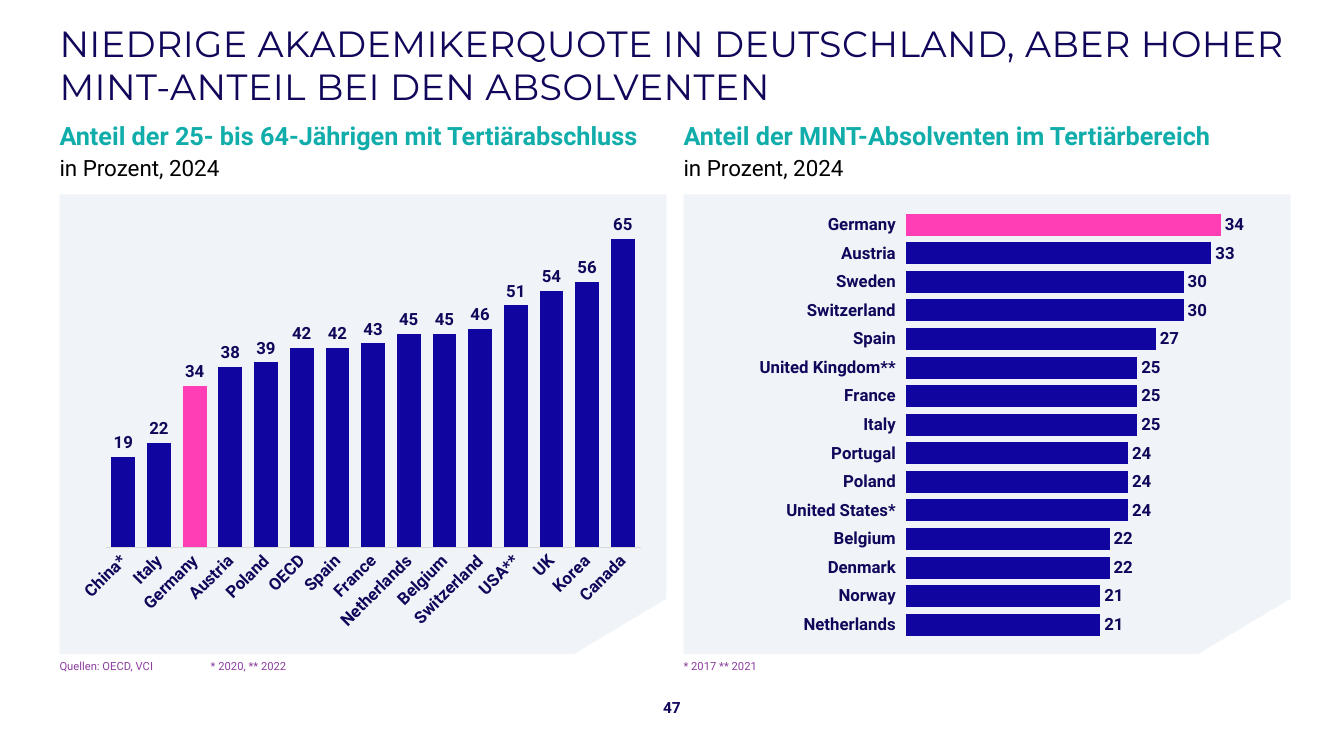
import lxml.etree
import pptx
import pptx.chart.data
import pptx.dml.color
import pptx.enum.chart
import pptx.enum.dml
import pptx.enum.text
import pptx.oxml
import pptx.oxml.ns
import pptx.util

Inches, Pt = pptx.util.Inches, pptx.util.Pt
qn = pptx.oxml.ns.qn
PP_ALIGN = pptx.enum.text.PP_ALIGN
ANCHOR = pptx.enum.text.MSO_ANCHOR
CHART_TYPE = pptx.enum.chart.XL_CHART_TYPE
TICK = pptx.enum.chart.XL_TICK_MARK

COLORS = {
    "ink": "10065A", "bar": "10069F", "highlight": "FF3EB5", "heading": "10ADAA",
    "unit": "000000", "note": "8C3E9F", "panel": "F0F3F7", "axis": "D9D9D9",
}
TITLE = "NIEDRIGE AKADEMIKERQUOTE IN DEUTSCHLAND, ABER HOHER MINT-ANTEIL BEI DEN ABSOLVENTEN"
PAGE_NUMBER = "47"
HIGHLIGHTED = "Germany"

PANELS = [
    {
        "left": 0.59,
        "heading": "Anteil der 25- bis 64-Jährigen mit Tertiärabschluss",
        "unit": "in Prozent, 2024",
        "note": "Quellen: OECD, VCI\t\t* 2020, ** 2022",
        "type": CHART_TYPE.COLUMN_CLUSTERED,
        "gap": 50, "overlap": -27, "maximum": 70,
        "shares": {
            "China*": 19, "Italy": 22, "Germany": 34, "Austria": 38, "Poland": 39,
            "OECD": 42, "Spain": 42, "France": 43, "Netherlands": 45, "Belgium": 45,
            "Switzerland": 46, "USA**": 51, "UK": 54, "Korea": 56, "Canada": 65,
        },
    },
    {
        "left": 6.78,
        "heading": "Anteil der MINT-Absolventen im Tertiärbereich",
        "unit": "in Prozent, 2024",
        "note": "* 2017 ** 2021",
        "type": CHART_TYPE.BAR_CLUSTERED,
        "gap": 30, "overlap": 0, "maximum": 40,
        "shares": {
            "Netherlands": 21, "Norway": 21, "Denmark": 22, "Belgium": 22,
            "United States*": 24, "Poland": 24, "Portugal": 24, "Italy": 25,
            "France": 25, "United Kingdom**": 25, "Spain": 27, "Switzerland": 30,
            "Sweden": 30, "Austria": 33, "Germany": 34,
        },
    },
]
PANEL_TOP, PANEL_WIDTH, PANEL_HEIGHT = 1.93, 6.02, 4.56
CUT_WIDTH, CUT_HEIGHT = 0.92, 0.55
BAR_PLOT = {"x": 0.365, "y": 0.009, "w": 0.635, "h": 0.991}


def rgb(name):
    return pptx.dml.color.RGBColor.from_string(COLORS[name])


def set_font(font, size, color, bold=False, name="Roboto"):
    font.name, font.size, font.bold = name, Pt(size), bold
    font.color.rgb = rgb(color)


def write(shape, text, box, size, color, bold=False, name="Roboto",
          align=PP_ALIGN.LEFT, anchor=ANCHOR.TOP, inset=0):
    """Place a text shape and fill it with one plain, unbulleted paragraph."""
    shape.left, shape.top, shape.width, shape.height = map(Inches, box)
    frame = shape.text_frame
    frame.text = text
    frame.word_wrap = True
    frame.auto_size = pptx.enum.text.MSO_AUTO_SIZE.NONE
    frame.vertical_anchor = anchor
    frame.margin_left = frame.margin_right = 0
    frame.margin_top = frame.margin_bottom = Inches(inset)
    paragraph = frame.paragraphs[0]
    paragraph.alignment = align
    paragraph.space_before = Pt(0)
    properties = paragraph._p.get_or_add_pPr()
    properties.set("marL", "0")
    properties.set("indent", "0")
    lxml.etree.SubElement(properties, qn("a:buNone"))
    set_font(paragraph.font, size, color, bold, name)
    return paragraph


def add_panel(slide, left):
    """Draw the pale backdrop with its lower right corner cut off."""
    right, bottom = left + PANEL_WIDTH, PANEL_TOP + PANEL_HEIGHT
    outline = [(right, PANEL_TOP), (right, bottom - CUT_HEIGHT),
               (right - CUT_WIDTH, bottom), (left, bottom)]
    builder = slide.shapes.build_freeform(Inches(left), Inches(PANEL_TOP))
    builder.add_line_segments([(Inches(x), Inches(y)) for x, y in outline], close=True)
    panel = builder.convert_to_shape()
    panel.shadow.inherit = False
    panel.fill.solid()
    panel.fill.fore_color.rgb = rgb("panel")
    panel.line.fill.background()


def fix_plot_area(chart, plot_box):
    """Pin the inner plot area to fractions of the chart space."""
    plot_area = chart._chartSpace.chart.plotArea
    for old in plot_area.findall(qn("c:layout")):
        plot_area.remove(old)
    layout = lxml.etree.Element(qn("c:layout"))
    manual = lxml.etree.SubElement(layout, qn("c:manualLayout"))
    settings = {"layoutTarget": "inner", "xMode": "edge", "yMode": "edge", **plot_box}
    for tag, value in settings.items():
        lxml.etree.SubElement(manual, qn(f"c:{tag}")).set("val", str(value))
    plot_area.insert(0, layout)


def add_share_chart(slide, panel):
    data = pptx.chart.data.CategoryChartData()
    data.categories = list(panel["shares"])
    data.add_series("Series 1", list(panel["shares"].values()))
    chart = slide.shapes.add_chart(
        panel["type"], Inches(panel["left"] + 0.09), Inches(2.05),
        Inches(5.79), Inches(4.29), data).chart
    chart.has_title = chart.has_legend = False
    set_font(chart.font, 12, "ink", bold=True)

    values = chart.value_axis
    values.visible = values.has_major_gridlines = False
    values.minimum_scale, values.maximum_scale = 0, panel["maximum"]

    countries = chart.category_axis
    set_font(countries.tick_labels.font, 12, "ink", bold=True)
    if panel["type"] == CHART_TYPE.COLUMN_CLUSTERED:
        countries.major_tick_mark = TICK.NONE
        countries.format.line.color.rgb = rgb("axis")
        countries.format.line.width = Pt(0.75)
        countries._element.find(f"{qn('c:txPr')}/{qn('a:bodyPr')}").set("rot", "-2700000")
    else:
        countries.major_tick_mark = TICK.OUTSIDE
        countries.format.line.fill.background()
        fix_plot_area(chart, BAR_PLOT)

    plot = chart.plots[0]
    plot.gap_width, plot.overlap = panel["gap"], panel["overlap"]
    plot.vary_by_categories = False
    series = plot.series[0]
    highlighted = series.points[list(panel["shares"]).index(HIGHLIGHTED)]
    for bars, color in ((series, "bar"), (highlighted, "highlight")):
        bars.format.fill.solid()
        bars.format.fill.fore_color.rgb = rgb(color)
    labels = series.data_labels
    labels.show_value = True
    labels.position = pptx.enum.chart.XL_LABEL_POSITION.OUTSIDE_END
    labels.number_format, labels.number_format_is_linked = "#,##0", False
    set_font(labels.font, 12, "ink", bold=True)


def main():
    deck = pptx.Presentation()
    deck.slide_width, deck.slide_height = Inches(13.33), Inches(7.5)
    slide = deck.slides.add_slide(deck.slide_layouts.get_by_name("Comparison"))
    title, *bodies = slide.placeholders

    for panel in PANELS:
        add_panel(slide, panel["left"])
    title_line = write(title, TITLE, (0.59, 0.15, 12.2, 0.98), 26, "ink",
                       name="Montserrat", anchor=ANCHOR.MIDDLE, inset=0.04)
    title_line.runs[0]._r.get_or_add_rPr().set("spc", "30")

    for panel, heading, unit in zip(PANELS, bodies[::2], bodies[1::2]):
        left = panel["left"]
        write(heading, panel["heading"], (left, 1.19, PANEL_WIDTH, 0.31), 18, "heading", bold=True)
        write(unit, panel["unit"], (left, 1.53, PANEL_WIDTH, 0.28), 16, "unit")
        note = slide.shapes.add_textbox(0, 0, 0, 0)
        write(note, panel["note"], (left, 6.54, 5.08, 0.13), 8, "note")
        add_share_chart(slide, panel)

    page = slide.shapes.add_textbox(0, 0, 0, 0)
    write(page, PAGE_NUMBER, (6.37, 6.88, 0.59, 0.28), 11, "ink", bold=True,
          align=PP_ALIGN.CENTER, anchor=ANCHOR.MIDDLE)
    deck.save("out.pptx")


if __name__ == "__main__":
    main()
